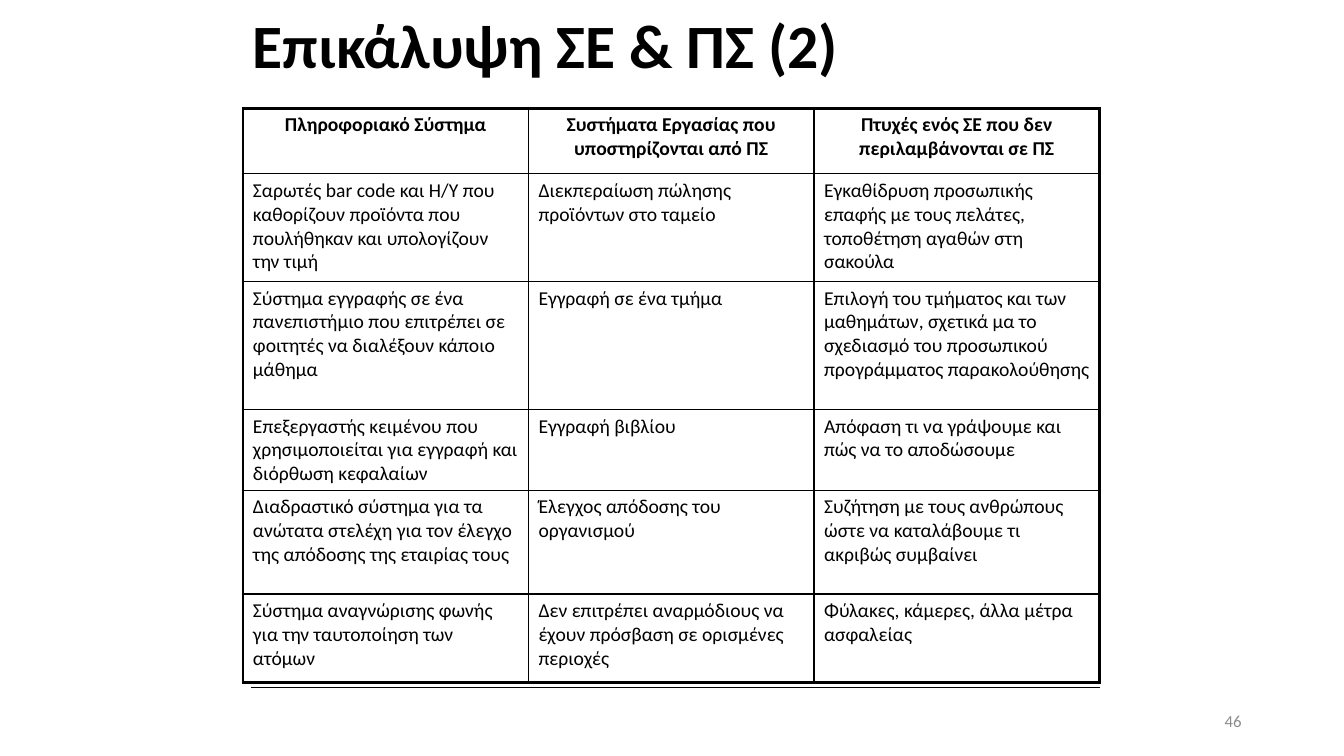
from lxml import etree
from pptx import Presentation
from pptx.dml import color
from pptx.enum import shapes, text
from pptx.oxml import ns
from pptx.util import Pt

BLACK = color.RGBColor(0x00, 0x00, 0x00)
GREY = color.RGBColor(0x8C, 0x8C, 0x8C)
FONT = "Calibri"
THIN, THICK = 1, 2.25

COLUMN_WIDTH = 204
ROW_HEIGHTS = [46.8, 77, 91.4, 57.6, 74.2, 63.4]
ROWS = [
    ("Πληροφοριακό Σύστημα",
     "Συστήματα Εργασίας που υποστηρίζονται από ΠΣ",
     "Πτυχές ενός ΣΕ που δεν περιλαμβάνονται σε ΠΣ"),
    ("Σαρωτές bar code και Η/Υ που καθορίζουν προϊόντα που πουλήθηκαν και υπολογίζουν την τιμή",
     "Διεκπεραίωση πώλησης προϊόντων στο ταμείο",
     "Εγκαθίδρυση προσωπικής επαφής με τους πελάτες, τοποθέτηση αγαθών στη σακούλα"),
    ("Σύστημα εγγραφής σε ένα πανεπιστήμιο που επιτρέπει σε φοιτητές να διαλέξουν κάποιο μάθημα",
     "Εγγραφή σε ένα τμήμα",
     "Επιλογή του τμήματος και των μαθημάτων, σχετικά μα το σχεδιασμό του προσωπικού "
     "προγράμματος παρακολούθησης"),
    ("Επεξεργαστής κειμένου που χρησιμοποιείται για εγγραφή και διόρθωση κεφαλαίων",
     "Εγγραφή βιβλίου",
     "Απόφαση τι να γράψουμε και πώς να το αποδώσουμε"),
    ("Διαδραστικό σύστημα για τα ανώτατα στελέχη για τον έλεγχο της απόδοσης της εταιρίας τους",
     "Έλεγχος απόδοσης του οργανισμού",
     "Συζήτηση με τους ανθρώπους ώστε να καταλάβουμε τι ακριβώς συμβαίνει"),
    ("Σύστημα αναγνώρισης φωνής για την ταυτοποίηση των ατόμων",
     "Δεν επιτρέπει αναρμόδιους να έχουν πρόσβαση σε ορισμένες περιοχές",
     "Φύλακες, κάμερες, άλλα μέτρα ασφαλείας"),
]


def write(frame, words, size, align, ink=BLACK, bold=False):
    para = frame.paragraphs[0]
    para.alignment = align
    span = para.add_run()
    span.text = words
    span.font.name = FONT
    span.font.size = Pt(size)
    span.font.bold = bold
    span.font.color.rgb = ink
    return para


def add_border(cell, side, width):
    """Draw one edge of a cell; side is L, R, T or B, added in that order."""
    properties = cell._tc.get_or_add_tcPr()
    edge = etree.SubElement(properties, ns.qn(f"a:ln{side}"), w=str(Pt(width)))
    fill = etree.SubElement(edge, ns.qn("a:solidFill"))
    etree.SubElement(fill, ns.qn("a:srgbClr"), val=str(BLACK))


deck = Presentation()
deck.slide_width, deck.slide_height = Pt(960), Pt(540)
page = deck.slides.add_slide(deck.slide_layouts[5])

number = page.shapes.add_textbox(Pt(678), Pt(500.5), Pt(216), Pt(28.75))
number.text_frame.word_wrap = True
number.text_frame.vertical_anchor = text.MSO_ANCHOR.MIDDLE
write(number.text_frame, "46", 12, text.PP_ALIGN.RIGHT, GREY)

title = page.shapes.title
title.left, title.top, title.width, title.height = Pt(173.5), Pt(3.6), Pt(612), Pt(62.6)
title.text_frame.vertical_anchor = text.MSO_ANCHOR.MIDDLE
title.text_frame.auto_size = text.MSO_AUTO_SIZE.NONE
heading = write(title.text_frame, "Επικάλυψη ΣΕ & ΠΣ (2)", 44, text.PP_ALIGN.LEFT, bold=True)
heading.line_spacing = 0.9

rule = page.shapes.add_connector(
    shapes.MSO_CONNECTOR.STRAIGHT, Pt(179.5), Pt(491), Pt(786), Pt(491))
rule.line.color.rgb = BLACK
rule.line.width = Pt(0.75)
etree.SubElement(rule._element.spPr, ns.qn("a:effectLst"))

last_row, last_column = len(ROWS) - 1, len(ROWS[0]) - 1
table = page.shapes.add_table(
    len(ROWS), len(ROWS[0]), Pt(173.5), Pt(77.25),
    Pt(COLUMN_WIDTH * len(ROWS[0])), Pt(sum(ROW_HEIGHTS))).table
table.first_row = table.horz_banding = False
for column in table.columns:
    column.width = Pt(COLUMN_WIDTH)

for r, (height, words) in enumerate(zip(ROW_HEIGHTS, ROWS)):
    table.rows[r].height = Pt(height)
    for c, phrase in enumerate(words):
        cell = table.cell(r, c)
        is_header = r == 0
        align = text.PP_ALIGN.CENTER if is_header else text.PP_ALIGN.LEFT
        write(cell.text_frame, phrase, 14, align, bold=is_header)
        outer = {"L": c == 0, "R": c == last_column, "T": r == 0, "B": r == last_row}
        for side, is_outer in outer.items():
            add_border(cell, side, THICK if is_outer else THIN)
        cell.fill.background()

deck.save("out.pptx")
